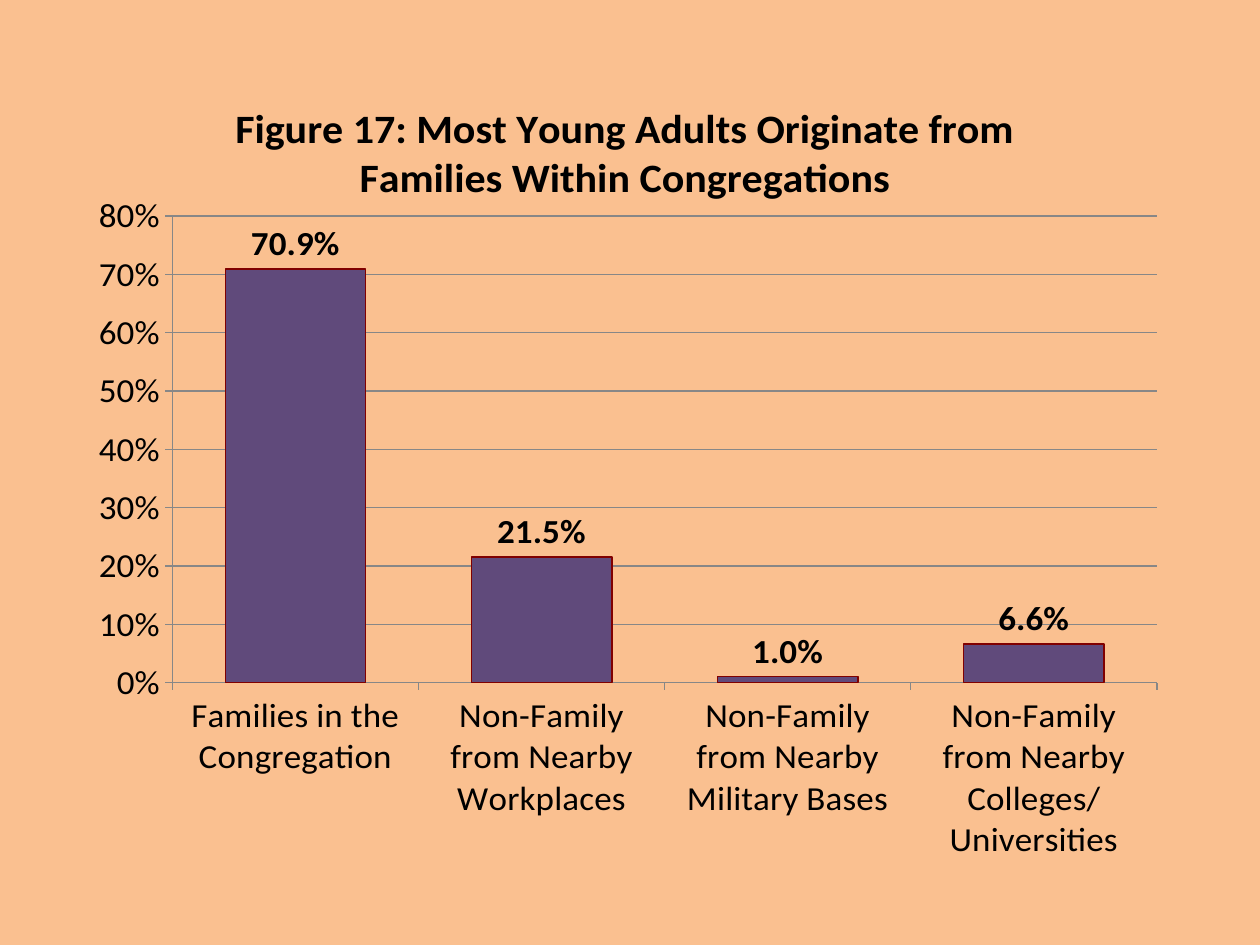
from lxml import etree
from pptx import Presentation
from pptx.chart.data import CategoryChartData
from pptx.dml.color import RGBColor
from pptx.enum.chart import XL_CHART_TYPE, XL_LABEL_POSITION, XL_TICK_MARK
from pptx.oxml.ns import qn
from pptx.util import Cm, Pt

COLUMN = XL_CHART_TYPE.COLUMN_CLUSTERED
ABOVE = XL_LABEL_POSITION.OUTSIDE_END
OUT = XL_TICK_MARK.OUTSIDE
NONE = XL_TICK_MARK.NONE

TITLE = ("Figure 17: Most Young Adults Originate from "
         "Families Within Congregations")
SHARES = {
    "Families in the Congregation": 0.709,
    "Non-Family from Nearby Workplaces": 0.215,
    "Non-Family from Nearby Military Bases": 0.01,
    "Non-Family from Nearby Colleges/ Universities": 0.066,
}


def rgb(code):
    return RGBColor.from_string(code)


def set_font(font, size, bold=False):
    font.name = "Calibri"
    font.size = Pt(size)
    font.bold = bold
    font.color.rgb = rgb("000000")


def set_line(line, color):
    line.color.rgb = rgb(color)
    line.width = Pt(0.75)


def place(part, index, **spots):
    """Give a chart part a manual layout, in fractions of the chart."""
    for old in part.findall(qn("c:layout")):
        part.remove(old)
    layout = etree.Element(qn("c:layout"))
    manual = etree.SubElement(layout, qn("c:manualLayout"))
    for tag, value in spots.items():
        etree.SubElement(manual, qn(f"c:{tag}")).set("val", str(value))
    part.insert(index, layout)


def add_title(chart):
    chart.has_title = True
    frame = chart.chart_title.text_frame
    frame.text = TITLE
    set_font(frame.paragraphs[0].runs[0].font, 24, True)
    chart.chart_title.include_in_layout = False
    place(chart.chart_title._element, 1,
          xMode="edge", yMode="edge", x=0.14, y=0.04)


def style_axis(axis):
    axis.major_tick_mark = OUT
    axis.minor_tick_mark = NONE
    set_font(axis.tick_labels.font, 20)
    set_line(axis.format.line, "878787")


def style_bars(plot):
    plot.gap_width = 75
    plot.vary_by_categories = False
    bars = plot.series[0]
    bars.format.fill.solid()
    bars.format.fill.fore_color.rgb = rgb("604A7B")
    set_line(bars.format.line, "800000")
    labels = bars.data_labels
    labels.show_value = True
    labels.position = ABOVE
    labels.number_format = "0.0%"
    labels.number_format_is_linked = False
    set_font(labels.font, 20, True)


def add_bars(slide):
    data = CategoryChartData(number_format="0.0%")
    data.categories = list(SHARES)
    data.add_series("Series 1", list(SHARES.values()))
    chart = slide.shapes.add_chart(
        COLUMN, Cm(1.47), Cm(1.27), Cm(22.3), Cm(16.08), data).chart
    chart.has_legend = False
    set_font(chart.font, 20)
    add_title(chart)

    # Axes and gridlines
    style_axis(chart.category_axis)
    scale = chart.value_axis
    style_axis(scale)
    scale.minimum_scale, scale.maximum_scale = 0, 0.8
    scale.major_unit = 0.1
    scale.tick_labels.number_format = "0%"
    scale.tick_labels.number_format_is_linked = False
    scale.has_major_gridlines = True
    set_line(scale.major_gridlines.format.line, "878787")

    # Bars and plot area
    style_bars(chart.plots[0])
    area = chart._chartSpace.find(".//" + qn("c:plotArea"))
    place(area, 0, layoutTarget="inner", xMode="edge", yMode="edge",
          x=0.09, y=0.2, w=0.89, h=0.61)


def main():
    deck = Presentation()
    deck.slide_width, deck.slide_height = Cm(25.4), Cm(19.05)
    slide = deck.slides.add_slide(deck.slide_layouts[6])
    fill = slide.background.fill
    fill.solid()
    fill.fore_color.rgb = rgb("FAC090")
    add_bars(slide)
    deck.save("out.pptx")


if __name__ == "__main__":
    main()
